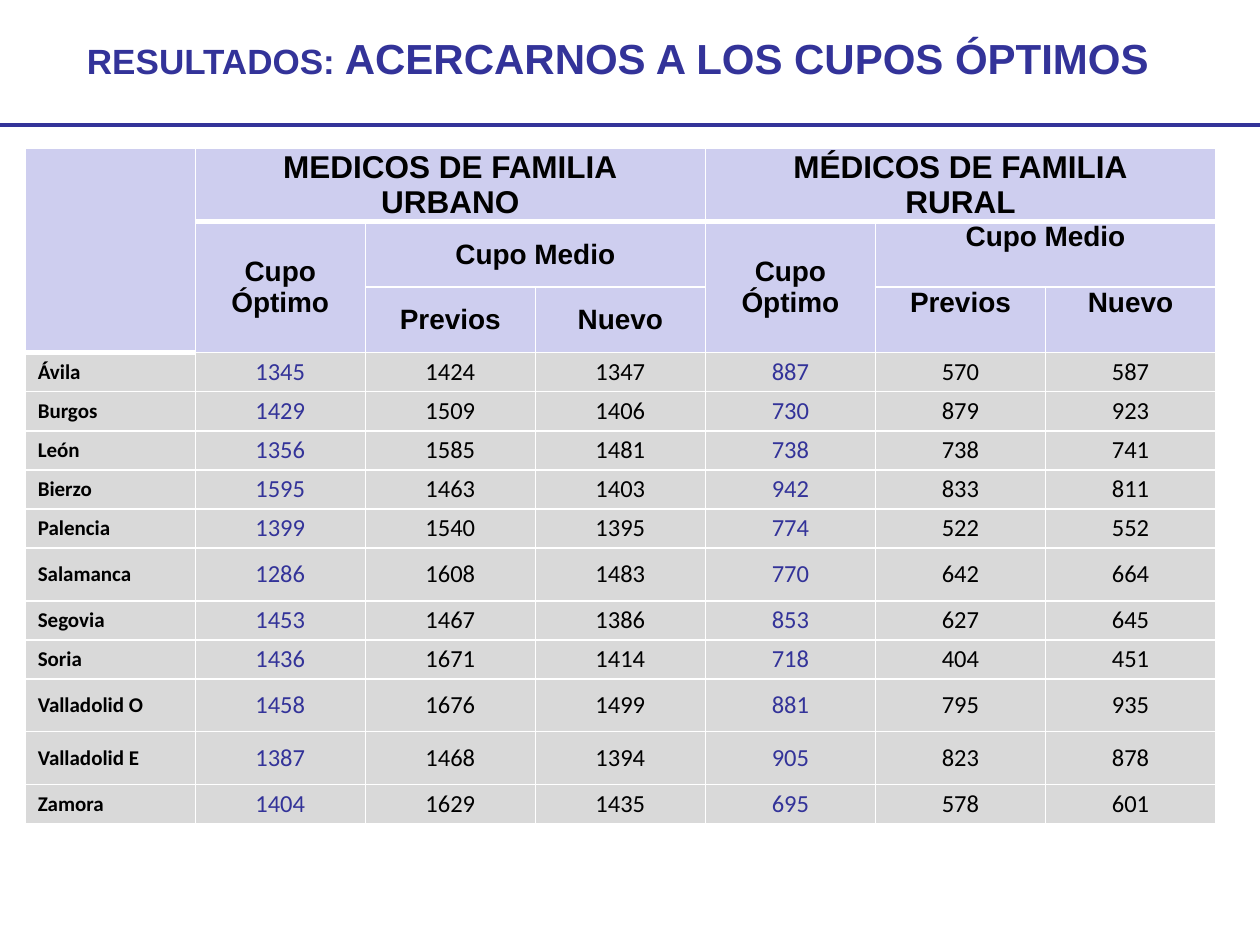
from dataclasses import dataclass

from lxml import etree
from pptx import Presentation
from pptx import util as u
from pptx.dml.color import RGBColor
from pptx.enum import shapes, text
from pptx.oxml.ns import qn


@dataclass(frozen=True)
class Theme:
    blue: str = "333399"
    black: str = "000000"
    white: str = "FFFFFF"
    lilac: str = "CECEEF"
    gray: str = "D9D9D9"
    head: str = "Arial"
    body: str = "Calibri"
    lead: int = 20
    title: int = 24
    group: int = 18
    sub: int = 16
    name: int = 12
    value: int = 14
    thin: float = 1
    thick: float = 3
    rule: float = 2.5


T = Theme()
CENTER, LEFT = text.PP_ALIGN.CENTER, text.PP_ALIGN.LEFT
TOP, MID = text.MSO_ANCHOR.TOP, text.MSO_ANCHOR.MIDDLE

# Area, then optimum, previous and new quota: urban, rural
DATA = [
    ("Ávila", 1345, 1424, 1347, 887, 570, 587),
    ("Burgos", 1429, 1509, 1406, 730, 879, 923),
    ("León", 1356, 1585, 1481, 738, 738, 741),
    ("Bierzo", 1595, 1463, 1403, 942, 833, 811),
    ("Palencia", 1399, 1540, 1395, 774, 522, 552),
    ("Salamanca", 1286, 1608, 1483, 770, 642, 664),
    ("Segovia", 1453, 1467, 1386, 853, 627, 645),
    ("Soria", 1436, 1671, 1414, 718, 404, 451),
    ("Valladolid O", 1458, 1676, 1499, 881, 795, 935),
    ("Valladolid E", 1387, 1468, 1394, 905, 823, 878),
    ("Zamora", 1404, 1629, 1435, 695, 578, 601),
]
TALL = {"Salamanca", "Valladolid O", "Valladolid E"}
HEADS = [0.58, 0.52, 0.52]


def add_run(para, words, size, font, color, bold=True):
    run = para.add_run()
    run.text = words
    run.font.size = u.Pt(size)
    run.font.name = font
    run.font.bold = bold
    run.font.color.rgb = RGBColor.from_string(color)


def add_title(slide, box):
    """Fill the title placeholder."""
    title = slide.shapes.title
    title.left, title.top, title.width, title.height = map(u.Inches, box)
    frame = title.text_frame
    frame.word_wrap = True
    frame.auto_size = text.MSO_AUTO_SIZE.NONE
    frame.vertical_anchor = TOP
    para = frame.paragraphs[0]
    para.alignment = LEFT
    para.line_spacing = 1.0
    para.space_before = u.Pt(0)
    add_run(para, "RESULTADOS: ", T.lead, T.head, T.blue)
    add_run(para, "ACERCARNOS A LOS CUPOS ÓPTIMOS", T.title, T.head, T.blue)


def add_rule(slide, left, top, width):
    """Draw the line below the title."""
    y = u.Inches(top)
    line = slide.shapes.add_connector(
        shapes.MSO_CONNECTOR.STRAIGHT, u.Inches(left), y, u.Inches(left + width), y)
    line.line.color.rgb = RGBColor.from_string(T.blue)
    line.line.width = u.Pt(T.rule)
    etree.SubElement(line._element.spPr, qn("a:effectLst"))


def is_thick(row, col):
    """Tell whether the lower edge of a cell is heavy."""
    return row == (2 if col == 0 else 0)


def set_edges(cell, row, col):
    props = cell._tc.get_or_add_tcPr()
    heavy = {"lnT": is_thick(row - 1, col), "lnB": is_thick(row, col)}
    for tag in ("lnL", "lnR", "lnT", "lnB"):
        width = T.thick if heavy.get(tag) else T.thin
        edge = etree.SubElement(props, qn("a:" + tag), w=str(u.Pt(width)))
        fill = etree.SubElement(edge, qn("a:solidFill"))
        etree.SubElement(fill, qn("a:srgbClr"), val=T.white)


def style_cell(cell, row, col):
    set_edges(cell, row, col)
    cell.fill.solid()
    color = T.lilac if row < len(HEADS) else T.gray
    cell.fill.fore_color.rgb = RGBColor.from_string(color)
    cell.margin_left = cell.margin_right = u.Inches(0.1)
    cell.margin_top = cell.margin_bottom = 0
    cell.vertical_anchor = MID


def write_cell(cell, lines, size, font, color, bold=True, align=CENTER):
    frame = cell.text_frame
    for num, words in enumerate(lines):
        para = frame.add_paragraph() if num else frame.paragraphs[0]
        para.alignment = align
        add_run(para, words, size, font, color, bold)


def add_heads(grid):
    """Merge and label the three heading rows."""
    grid.cell(0, 0).merge(grid.cell(2, 0))
    groups = [(1, ["MEDICOS DE FAMILIA", "URBANO"], MID),
              (4, ["MÉDICOS DE FAMILIA", "RURAL"], TOP)]
    for col, lines, anchor in groups:
        grid.cell(0, col).merge(grid.cell(0, col + 2))
        grid.cell(1, col).merge(grid.cell(2, col))
        grid.cell(1, col + 1).merge(grid.cell(1, col + 2))
        write_cell(grid.cell(0, col), lines, T.group, T.head, T.black)
        write_cell(grid.cell(1, col), ["Cupo Óptimo"], T.sub, T.head, T.black)
        subs = [(1, 1, "Cupo Medio"), (2, 1, "Previos"), (2, 2, "Nuevo")]
        for row, step, words in subs:
            cell = grid.cell(row, col + step)
            cell.vertical_anchor = anchor
            write_cell(cell, [words], T.sub, T.head, T.black)


def add_quotas(slide, left, top, width):
    """Build the table of quotas."""
    sizes = HEADS + [0.42 if rec[0] in TALL else 0.31 for rec in DATA]
    count = len(DATA[0])
    grid = slide.shapes.add_table(
        len(sizes), count, u.Inches(left), u.Inches(top),
        u.Inches(width), u.Inches(sum(sizes))).table
    grid.first_row = grid.horz_banding = False
    for col in grid.columns:
        col.width = u.Inches(width / count)
    for row, size in enumerate(sizes):
        grid.rows[row].height = u.Inches(size)
        for col in range(count):
            style_cell(grid.cell(row, col), row, col)
    add_heads(grid)
    for row, (name, *values) in enumerate(DATA, len(HEADS)):
        write_cell(grid.cell(row, 0), [name], T.name, T.body, T.black, align=LEFT)
        for col, value in enumerate(values, 1):
            color = T.blue if col in (1, 4) else T.black
            write_cell(grid.cell(row, col), [str(value)], T.value, T.body, color, False)


def main():
    deck = Presentation()
    deck.slide_width, deck.slide_height = u.Inches(10), u.Inches(7.5)
    slide = deck.slides.add_slide(deck.slide_layouts[5])
    add_rule(slide, 0, 0.99, 10)
    add_title(slide, (0.59, 0.21, 9.21, 0.51))
    add_quotas(slide, 0.2, 1.18, 9.45)
    deck.save("out.pptx")


if __name__ == "__main__":
    main()
